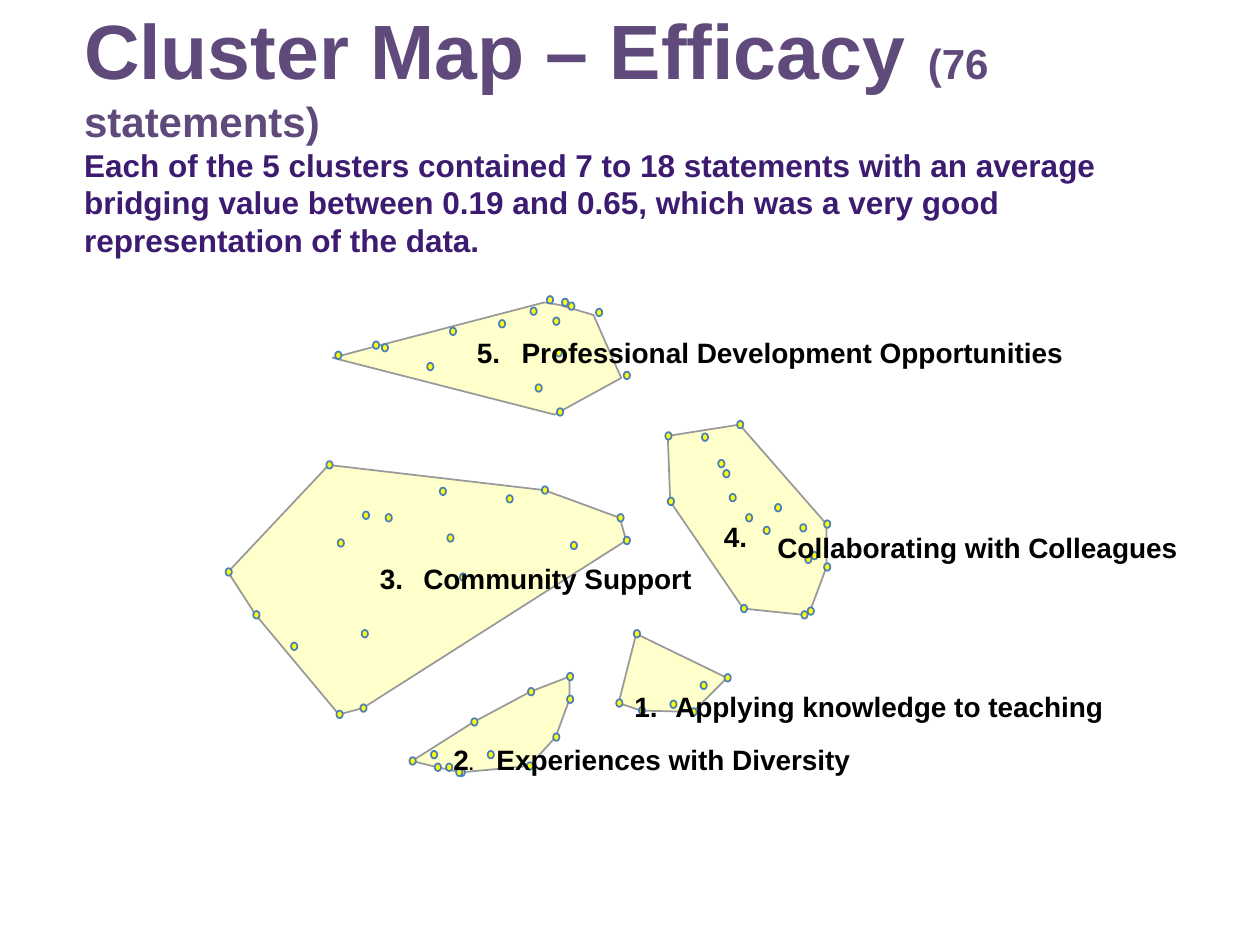
from pptx import Presentation
from pptx.dml.color import RGBColor
from pptx.enum.shapes import MSO_SHAPE
from pptx.enum.text import MSO_ANCHOR, PP_ALIGN
from pptx.util import Pt

OVAL = MSO_SHAPE.OVAL
TOP = MSO_ANCHOR.TOP
LEFT, RIGHT = PP_ALIGN.LEFT, PP_ALIGN.RIGHT

THEME = {
    "font": "Arial",
    "title": RGBColor.from_string("604A7B"),
    "note": RGBColor.from_string("3C1B71"),
    "label": RGBColor.from_string("000000"),
    "area": RGBColor.from_string("FFFFCC"),
    "edge": RGBColor.from_string("999999"),
    "dot": RGBColor.from_string("FFFF00"),
    "ring": RGBColor.from_string("4B7EBC"),
    "big": 44, "mid": 24, "body": 18, "text": 16, "small": 10,
}
UNIT = 0.72  # points per step of the map grid
DOT_W, DOT_H = 5, 6  # grid steps

# Clusters in grid steps: name, outline, inner statements,
# right end and top of the number, gap and drop from there to the name.
# Each corner of an outline is a statement too.
CLUSTERS = [
    ("Applying knowledge to teaching",
     [(491, 558), (505, 503), (577, 538), (550, 565), (509, 564)],
     [(534, 559), (558, 544)],
     (522, 547), (14, 0)),
    ("Experiences with Diversity",
     [(327, 604), (376, 573), (421, 549), (452, 537), (452, 555),
      (441, 585), (420, 608), (366, 613), (347, 609)],
     [(344, 599), (364, 613), (389, 599), (356, 609)],
     (376, 589), (18, 0)),
    ("Community Support",
     [(181, 454), (261, 369), (432, 389), (492, 411), (497, 429),
      (288, 562), (269, 567), (203, 488)],
     [(289, 503), (233, 513), (404, 396), (357, 427), (308, 411),
      (290, 409), (455, 433), (351, 390), (270, 431), (367, 458)],
     (320, 446), (16, 0)),
    ("Collaborating with Colleagues",
     [(530, 346), (587, 337), (656, 416), (656, 450), (643, 485),
      (638, 488), (590, 483), (532, 398)],
     [(641, 444), (646, 441), (581, 395), (594, 411), (617, 403),
      (637, 419), (576, 376), (572, 368), (608, 421), (559, 347)],
     (593, 412), (24, 9)),
    ("Professional Development Opportunities",
     [(264, 284), (294, 276), (432, 240), (444, 242), (471, 250),
      (493, 300), (440, 329)],
     [(437, 257), (301, 278), (419, 249), (449, 245), (337, 293),
      (355, 265), (439, 282), (423, 310), (394, 259)],
     (397, 266), (17, 0)),
]


def paint(shape, fill, line):
    shape.shadow.inherit = False
    shape.fill.solid()
    shape.fill.fore_color.rgb = fill
    shape.line.color.rgb = line
    shape.line.width = Pt(1)


def write(para, parts, color, align=LEFT):
    """Fill a paragraph with (text, size) parts in bold."""
    for text, size in parts:
        run = para.add_run()
        run.text = text
        run.font.size = Pt(size)
    para.alignment = align
    para.font.name = THEME["font"]
    para.font.bold = True
    para.font.color.rgb = color


deck = Presentation()
deck.slide_width, deck.slide_height = Pt(720), Pt(540)
slide = deck.slides.add_slide(deck.slide_layouts[6])

# Title and note
frame = slide.shapes.add_textbox(Pt(41), Pt(1.6), Pt(648), Pt(142)).text_frame
frame.word_wrap = True
frame.vertical_anchor = TOP
frame.margin_top = frame.margin_bottom = 0
write(frame.paragraphs[0],
      [("Cluster Map – Efficacy ", THEME["big"]),
       ("(76 statements)", THEME["mid"])], THEME["title"])
write(frame.add_paragraph(),
      [("Each of the 5 clusters contained 7 to 18 statements with an average "
        "bridging value between 0.19 and 0.65, which was a very good "
        "representation of the data.", THEME["body"])], THEME["note"])

# Cluster map
chart = slide.shapes.add_group_shape().shapes
for num, (name, rim, inner, (end, top), (gap, drop)) in enumerate(CLUSTERS, 1):
    # Area
    pen = chart.build_freeform(*rim[0], scale=Pt(UNIT))
    pen.add_line_segments(rim[1:], close=True)
    paint(pen.convert_to_shape(), THEME["area"], THEME["edge"])

    # Statements: the last cluster has them a little up and right
    dx, dy = (2, -5) if num == 5 else (-2, -3)
    for x, y in rim + inner:
        dot = chart.add_shape(OVAL, Pt((x + dx) * UNIT), Pt((y + dy) * UNIT),
                              Pt(DOT_W * UNIT), Pt(DOT_H * UNIT))
        paint(dot, THEME["dot"], THEME["ring"])

    # Number and name
    stop = THEME["small"] if num == 2 else THEME["text"]
    labels = [
        (end - 30, top, 30, [(str(num), THEME["text"]), (".", stop)], RIGHT),
        (end + gap, top + drop, 13 * len(name), [(name, THEME["text"])], LEFT),
    ]
    for x, y, w, parts, align in labels:
        frame = chart.add_textbox(Pt(x * UNIT), Pt(y * UNIT),
                                  Pt(w * UNIT), Pt(18.4)).text_frame
        frame.word_wrap = False
        frame.margin_left = frame.margin_right = 0
        frame.margin_top = frame.margin_bottom = 0
        write(frame.paragraphs[0], parts, THEME["label"], align)

deck.save("out.pptx")
